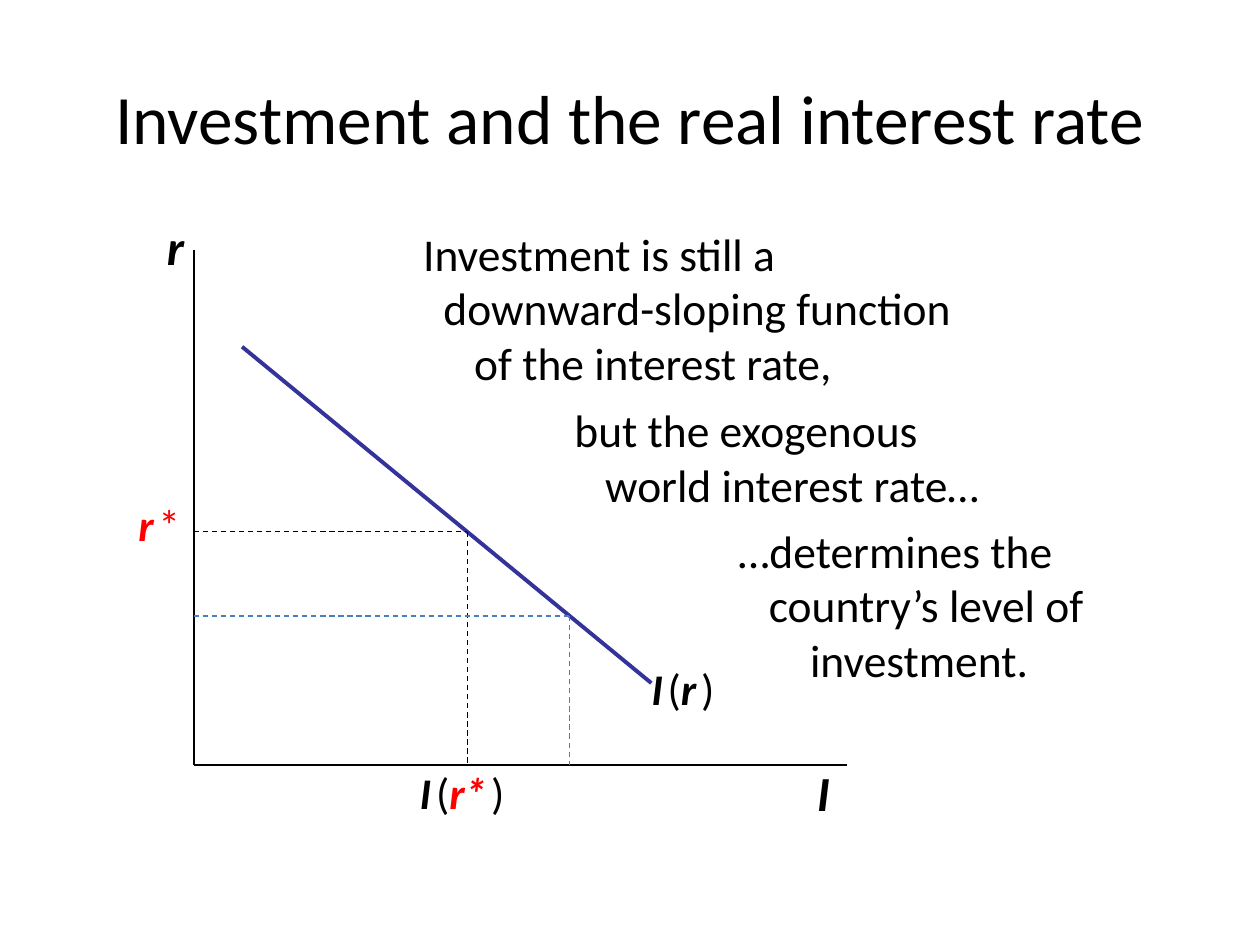
from dataclasses import dataclass

from lxml.etree import SubElement
from pptx import Presentation
from pptx.dml.color import RGBColor as Rgb
from pptx.enum.dml import MSO_LINE_DASH_STYLE as Dash
from pptx.enum.shapes import MSO_CONNECTOR as Connector
from pptx.enum.text import MSO_ANCHOR as Anchor, PP_ALIGN as Align
from pptx.oxml.ns import qn
from pptx.util import Cm, Pt


@dataclass(frozen=True)
class Theme:
    font: str = "Calibri"
    ink: Rgb = Rgb(0x00, 0x00, 0x00)
    world: Rgb = Rgb(0xFF, 0x00, 0x00)
    curve: Rgb = Rgb(0x33, 0x33, 0x99)
    guide: Rgb = Rgb(0x4B, 0x7E, 0xBC)
    title: float = 39.6
    axis: float = 28
    body: float = 26
    label: float = 25
    gap: float = 12
    thin: float = 0.75
    thick: float = 2.25


class Board:
    def __init__(self, slide, theme):
        self.slide = slide
        self.theme = theme

    def frame(self, left, top, width, height, inset=(0.25, 0.13, 0.25, 0.13)):
        box = self.slide.shapes.add_textbox(Cm(left), Cm(top), Cm(width), Cm(height))
        frame = box.text_frame
        frame.word_wrap = True
        (frame.margin_left, frame.margin_top,
         frame.margin_right, frame.margin_bottom) = map(Cm, inset)
        return frame

    def add_words(self, paragraph, words, size, color=None, strong=False):
        run = paragraph.add_run()
        run.text = words
        font = run.font
        font.name, font.size = self.theme.font, Pt(size)
        font.bold = font.italic = strong
        font.color.rgb = color or self.theme.ink

    def heading(self, words, *place):
        frame = self.frame(*place)
        frame.vertical_anchor = Anchor.MIDDLE
        frame.paragraphs[0].alignment = Align.CENTER
        self.add_words(frame.paragraphs[0], words, self.theme.title)

    def remark(self, lines, *place):
        frame = self.frame(*place)
        for number, (indent, words) in enumerate(lines):
            line = frame.add_paragraph() if number else frame.paragraphs[0]
            line._p.get_or_add_pPr().set("marL", str(Cm(indent)))
            self.add_words(line, words, self.theme.body)

    def axis_name(self, symbol, *place):
        name = self.frame(*place).paragraphs[0]
        name.alignment = Align.CENTER
        self.add_words(name, symbol, self.theme.axis, strong=True)

    def formula(self, parts, *place, **options):
        label = self.frame(*place, **options).paragraphs[0]
        for words, color, strong in parts:
            size = self.theme.label if words.strip() else self.theme.gap
            self.add_words(label, words, size, color, strong)

    def line(self, start, end, color, weight, dashed=False):
        line = self.slide.shapes.add_connector(
            Connector.STRAIGHT, *map(Cm, (*start, *end)))
        line.line.color.rgb = color
        line.line.width = Pt(weight)
        if dashed:
            line.line.dash_style = Dash.DASH
        SubElement(line._element.spPr, qn("a:effectLst"))


def main():
    deck = Presentation()
    deck.slide_width, deck.slide_height = Cm(25.4), Cm(19.05)
    theme = Theme()
    board = Board(deck.slides.add_slide(deck.slide_layouts[6]), theme)
    ink, world = theme.ink, theme.world

    board.heading("Investment and the real interest rate", 1.27, 0.76, 22.86, 3.18)

    board.remark([(0, "Investment is still a"),
                  (0.41, "downward-sloping function"),
                  (1.03, "of the interest rate,")], 8.28, 4.42, 12.27, 3.56)
    board.remark([(0, "but the exogenous"),
                  (0.62, "world interest rate…")], 11.33, 7.98, 10.59, 2.46)
    board.remark([(0, "…determines the"),
                  (0.62, "country’s level of"),
                  (1.45, "investment.")], 14.63, 10.41, 8.26, 3.56)

    origin_x, origin_y = 3.91, 15.42
    origin = origin_x, origin_y
    board.line((origin_x, 5.03), origin, ink, theme.thin)
    board.line(origin, (17.07, origin_y), ink, theme.thin)
    board.axis_name("r", 2.97, 4.24, 1.14, 1.45)
    board.axis_name("I", 15.42, 15.24, 2.36, 1.45)

    high, low = (4.88, 6.99), (13.13, 13.77)
    board.line(high, low, theme.curve, theme.thick)
    run_per_rise = (low[0] - high[0]) / (low[1] - high[1])
    for rate, color in ((10.72, ink), (12.42, theme.guide)):
        investment = high[0] + (rate - high[1]) * run_per_rise
        corner = investment, rate
        board.line((origin_x, rate), corner, color, theme.thin, dashed=True)
        board.line(corner, (investment, origin_y), color, theme.thin, dashed=True)

    tight = (0, 0, 0, 0.25)
    space = (" ", ink, True)
    opening = [("I", ink, True), space, ("(", ink, False)]
    closing = [space, (")", ink, False)]
    board.formula([("r", world, True), space, ("*", world, False)],
                  2.54, 9.91, 1.7, 1.32)
    board.formula(opening + [("r*", world, True)] + closing,
                  8.46, 15.44, 2.54, 1.32, inset=tight)
    board.formula(opening + [("r", ink, True)] + closing,
                  13.13, 13.34, 1.9, 1.32, inset=tight)

    deck.save("out.pptx")


if __name__ == "__main__":
    main()
